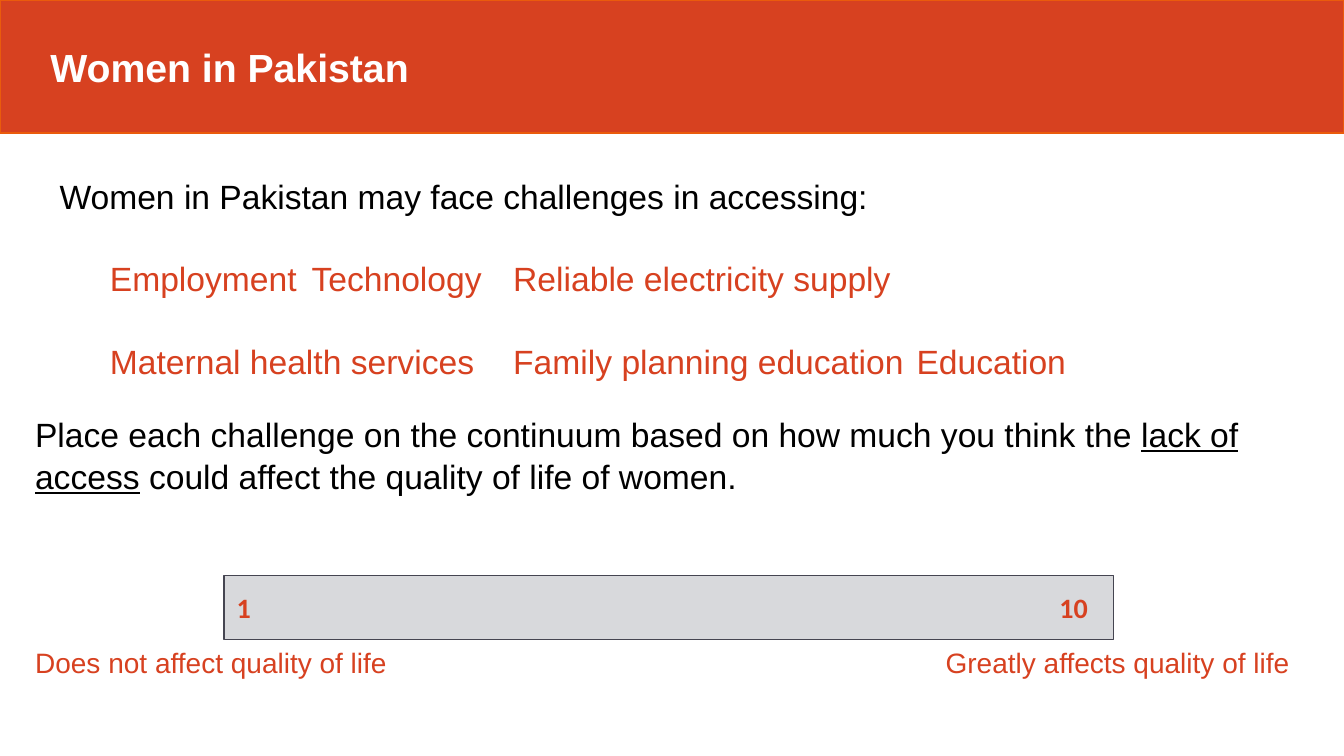
from pptx import Presentation
from pptx.dml.color import RGBColor
from pptx.enum.shapes import MSO_SHAPE
from pptx.enum.text import MSO_ANCHOR, MSO_AUTO_SIZE, PP_ALIGN
from pptx.oxml.xmlchemy import OxmlElement
from pptx.util import Emu, Pt

PX = 9144  # 100 px to the inch
COLORS = {
    "red": "D74120", "edge": "EA5B0C", "white": "FFFFFF",
    "black": "000000", "bar": "D8D9DC", "bar_edge": "454551",
}


def px(n):
    return Emu(n * PX)


def rgb(name):
    return RGBColor.from_string(COLORS[name])


def add_run(p, text, size=24, font="Arial", color="black", bold=False, underline=False):
    r = p.add_run()
    r.text = text
    f = r.font
    f.size, f.name, f.bold, f.underline = Pt(size), font, bold, underline
    f.color.rgb = rgb(color)
    return r


def set_layout(p, indent=0, tabs=()):
    """Remove the bullet and set the left indent and tab stops."""
    pPr = p._p.get_or_add_pPr()
    pPr.set("marL", str(px(indent)))
    pPr.set("indent", "0")
    pPr.append(OxmlElement("a:buNone"))
    if tabs:
        tab_list = OxmlElement("a:tabLst")
        for pos in tabs:
            tab = OxmlElement("a:tab")
            tab.set("pos", str(px(pos)))
            tab.set("algn", "l")
            tab_list.append(tab)
        pPr.append(tab_list)


class SlideBuilder:
    def __init__(self, prs):
        self.s = prs.slides.add_slide(prs.slide_layouts[1])

    def place(self, sp, box):
        sp.left, sp.top, sp.width, sp.height = map(px, box)

    def paint(self, sp, fill, line, width):
        sp.fill.solid()
        sp.fill.fore_color.rgb = rgb(fill)
        sp.line.color.rgb = rgb(line)
        sp.line.width = Pt(width)

    def frame(self, sp, left=10, top=10, anchor=MSO_ANCHOR.TOP):
        tf = sp.text_frame
        tf.word_wrap = True
        tf.auto_size = MSO_AUTO_SIZE.NONE
        tf.vertical_anchor = anchor
        tf.margin_left, tf.margin_right = px(left), px(10)
        tf.margin_top = tf.margin_bottom = px(top)
        return tf

    def title(self, box, text):
        sp = self.s.shapes.title
        self.place(sp, box)
        self.paint(sp, "red", "edge", 1)
        p = self.frame(sp, left=50, top=5, anchor=MSO_ANCHOR.MIDDLE).paragraphs[0]
        p.alignment = PP_ALIGN.LEFT
        add_run(p, text, size=28, color="white", bold=True)

    def body(self, box, intro, rows):
        sp = self.s.placeholders[1]
        self.place(sp, box)
        tf = self.frame(sp, top=5)
        p = tf.paragraphs[0]
        set_layout(p)
        p.space_before = Pt(0)
        add_run(p, intro)
        for names, tabs in rows:
            p = tf.add_paragraph()
            set_layout(p, indent=50, tabs=tabs)
            p.space_before = Pt(29)
            p.line_spacing = 1.04
            add_run(p, "\t".join(names), color="red")

    def text(self, box, *parts, **style):
        """Each part is a string or a (string, format) pair."""
        sp = self.s.shapes.add_textbox(*map(px, box))
        p = self.frame(sp).paragraphs[0]
        p.line_spacing = 1.04
        for part in parts:
            words, extra = part if isinstance(part, tuple) else (part, {})
            add_run(p, words, **{**style, **extra})

    def bar(self, box, thickness):
        sp = self.s.shapes.add_shape(MSO_SHAPE.MATH_MINUS, *map(px, box))
        sp.shadow.inherit = False
        sp.adjustments[0] = thickness
        self.paint(sp, "bar", "bar_edge", 0.75)


def main():
    prs = Presentation()
    prs.slide_width, prs.slide_height = px(1333), px(750)
    slide = SlideBuilder(prs)

    # Heading and challenges
    slide.title((0, 0, 1333, 132), "Women in Pakistan")
    slide.body(
        (49, 169, 1260, 212),
        "Women in Pakistan may face challenges in accessing:",
        [
            (("Employment", "Technology", "Reliable electricity supply"), (408, 700)),
            (("Maternal health services", "Family planning education", "Education"), (400, 809)),
        ],
    )

    # Task
    slide.text(
        (25, 399, 1283, 101),
        "Place each challenge on the continuum based on how much you think the ",
        ("lack of access", {"underline": True}),
        " could affect the quality of life of women.",
    )

    # Continuum with its end labels
    slide.bar((63, 468, 1201, 269), 0.235)
    for left, width, label in (
        (25, 470, "Does not affect quality of life"),
        (928, 368, "Greatly affects quality of life"),
    ):
        slide.text((left, 629, width, 54), label, size=20, color="red")
    for left, number in ((225, "1"), (1041, "10")):
        slide.text((left, 575, 87, 54), number, size=20, font="Calibri", color="red", bold=True)

    prs.save("out.pptx")


if __name__ == "__main__":
    main()
